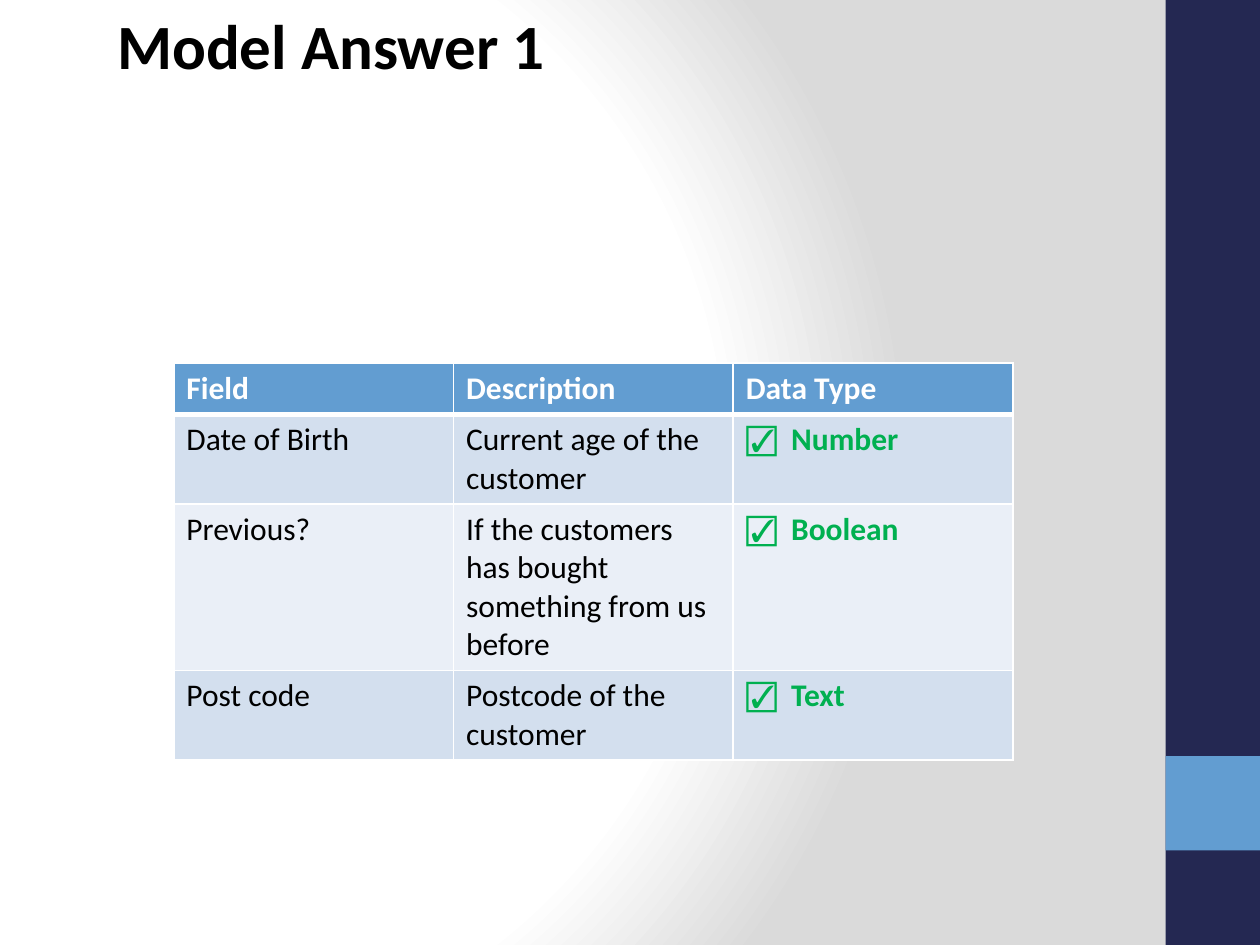
from dataclasses import dataclass

from lxml.etree import SubElement
from pptx import Presentation
from pptx.dml.color import RGBColor
from pptx.enum.shapes import MSO_SHAPE as Shape
from pptx.enum.text import MSO_ANCHOR as Anchor, MSO_AUTO_SIZE as AutoSize, PP_ALIGN as Align
from pptx.oxml import parse_xml
from pptx.oxml.ns import nsdecls, qn
from pptx.slide import Slide
from pptx.table import _Cell as Cell
from pptx.text.text import _Paragraph as Paragraph
from pptx.util import Inches, Pt


@dataclass(frozen=True)
class Theme:
    font: str = "Calibri"
    title_size: int = 36
    table_size: int = 18
    text: str = "000000"
    light: str = "FFFFFF"
    shade: str = "DADADA"
    navy: str = "242852"
    blue: str = "629DD1"
    answer: str = "00B050"
    bands: tuple[str, str] = ("D3DFEE", "EAEFF7")
    thin_border: int = 1
    thick_border: int = 3


@dataclass(frozen=True)
class Panel:
    top: float
    height: float
    color: str


@dataclass(frozen=True)
class Field:
    name: str
    description: str
    data_type: str
    height: float


THEME = Theme()
PANELS = [Panel(0, 7.5, THEME.navy), Panel(6, 0.75, THEME.blue)]
HEADER = Field("Field", "Description", "Data Type", 0.41)
FIELDS = [
    Field("Date of Birth", "Current age of the customer", "☑\tNumber", 0.7),
    Field("Previous?", "If the customers has bought something from us before", "☑\tBoolean", 1.3),
    Field("Post code", "Postcode of the customer", "☑\tText", 0.7),
]
COLUMN_WIDTH = 2.22
ANSWER_TAB = 0.36


def format_paragraph(para: Paragraph, size: int, color: str, bold: bool) -> None:
    """Left-align a paragraph and style its runs."""
    para.alignment = Align.LEFT
    for span in para.runs:
        span.font.name = THEME.font
        span.font.size = Pt(size)
        span.font.bold = bold
        span.font.color.rgb = RGBColor.from_string(color)


def paint_background(page: Slide) -> None:
    """Fill the page with a circular gradient from white to grey."""
    page.background.fill.gradient()
    gradient = next(page.element.iter(qn("a:gradFill")))
    stops = [(0, THEME.light), (75, THEME.light), (100, THEME.shade)]
    stop_xml = "".join(
        f'<a:gs pos="{position * 1000}"><a:srgbClr val="{color}"/></a:gs>'
        for position, color in stops
    )
    gradient.getparent().replace(gradient, parse_xml(
        f'<a:gradFill {nsdecls("a")} rotWithShape="1"><a:gsLst>{stop_xml}</a:gsLst>'
        '<a:path path="circle"><a:fillToRect l="20000" t="50000" r="100000" b="50000"/>'
        "</a:path></a:gradFill>"
    ))


def draw_panel(page: Slide, panel: Panel) -> None:
    """Draw one block of the right-hand sidebar."""
    box = page.shapes.add_shape(
        Shape.RECTANGLE, Inches(9.25), Inches(panel.top), Inches(0.75), Inches(panel.height)
    )
    box.shadow.inherit = False
    box.fill.solid()
    box.fill.fore_color.rgb = RGBColor.from_string(panel.color)
    box.line.fill.background()


def write_title(page: Slide, text: str) -> None:
    """Place and style the title at the top of the page."""
    title = page.shapes.title
    title.left, title.top = Inches(0.83), Inches(0)
    title.width, title.height = Inches(8.27), Inches(3)
    frame = title.text_frame
    frame.text = text
    frame.word_wrap = True
    frame.auto_size = AutoSize.NONE
    frame.vertical_anchor = Anchor.TOP
    format_paragraph(frame.paragraphs[0], THEME.title_size, THEME.text, True)


def set_borders(cell: Cell, top: int, bottom: int) -> None:
    """Give a cell white borders with the stated top and bottom widths."""
    properties = cell._tc.get_or_add_tcPr()
    widths = {"lnL": THEME.thin_border, "lnR": THEME.thin_border, "lnT": top, "lnB": bottom}
    for index, (side, width) in enumerate(widths.items()):
        properties.insert(index, parse_xml(
            f'<a:{side} {nsdecls("a")} w="{Pt(width)}"><a:solidFill>'
            f'<a:srgbClr val="{THEME.light}"/></a:solidFill></a:{side}>'
        ))


def fill_cell(cell: Cell, text: str, fill: str, color: str, bold: bool) -> None:
    """Write a cell and set its background and text style."""
    cell.text_frame.text = text
    cell.fill.solid()
    cell.fill.fore_color.rgb = RGBColor.from_string(fill)
    para = cell.text_frame.paragraphs[0]
    format_paragraph(para, THEME.table_size, color, bold)
    if "\t" in text:
        tabs = SubElement(para._p.get_or_add_pPr(), qn("a:tabLst"))
        SubElement(tabs, qn("a:tab"), pos=str(Inches(ANSWER_TAB)), algn="l")


def draw_table(page: Slide, header: Field, fields: list[Field]) -> None:
    """Draw the header row and the banded field rows."""
    rows = [header, *fields]
    table = page.shapes.add_table(
        len(rows), 3, Inches(1.38), Inches(2.88),
        Inches(3 * COLUMN_WIDTH), Inches(sum(row.height for row in rows)),
    ).table
    for column in table.columns:
        column.width = Inches(COLUMN_WIDTH)
    for index, row in enumerate(rows):
        table.rows[index].height = Inches(row.height)
        is_header = index == 0
        fill = THEME.blue if is_header else THEME.bands[(index - 1) % 2]
        plain = THEME.light if is_header else THEME.text
        answer = THEME.light if is_header else THEME.answer
        top = THEME.thick_border if index == 1 else THEME.thin_border
        bottom = THEME.thick_border if is_header else THEME.thin_border
        styles = [(row.name, plain, is_header), (row.description, plain, is_header),
                  (row.data_type, answer, True)]
        for cell, (text, color, bold) in zip(table.rows[index].cells, styles):
            fill_cell(cell, text, fill, color, bold)
            set_borders(cell, top, bottom)


def main() -> None:
    """Build and save the deck."""
    deck = Presentation()
    deck.slide_width, deck.slide_height = Inches(10), Inches(7.5)
    page = deck.slides.add_slide(deck.slide_layouts[5])
    paint_background(page)
    for panel in PANELS:
        draw_panel(page, panel)
    write_title(page, "Model Answer 1")
    draw_table(page, HEADER, FIELDS)
    deck.save("out.pptx")


if __name__ == "__main__":
    main()
